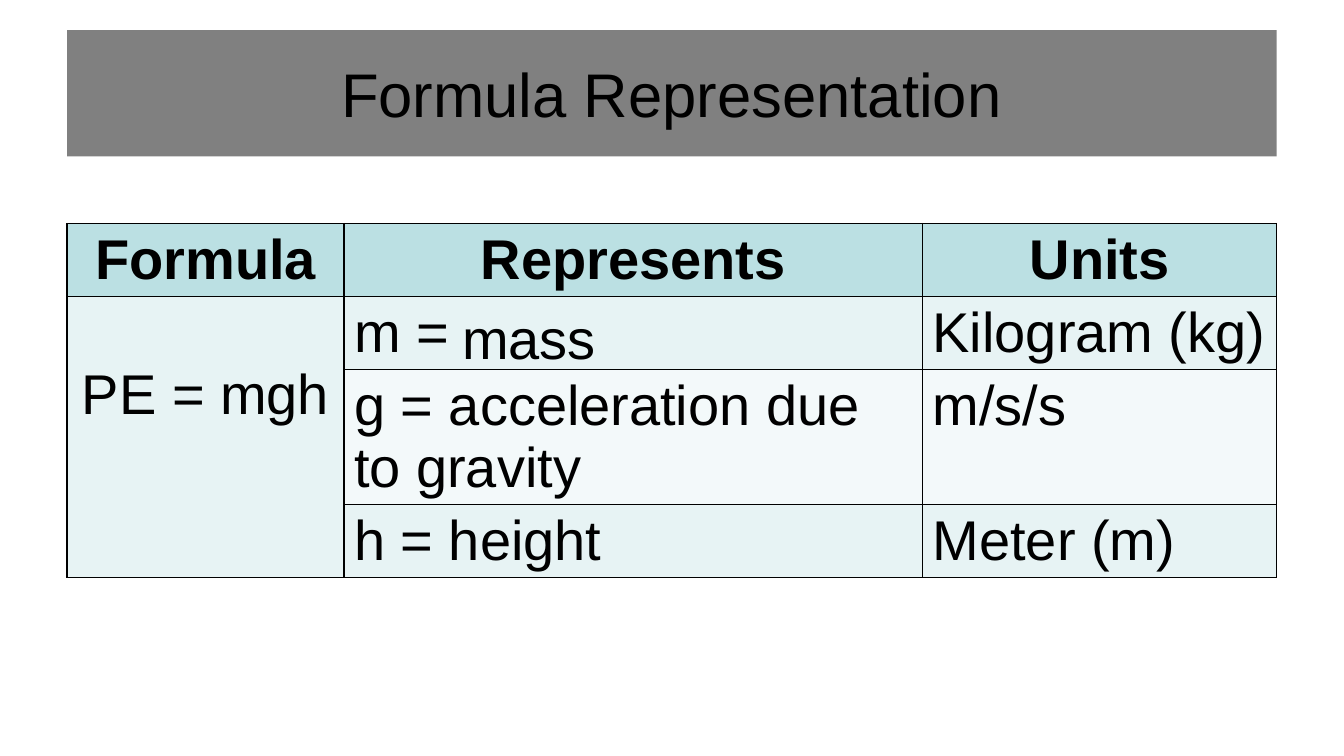
from lxml.etree import SubElement
from pptx import Presentation
from pptx.dml.color import RGBColor
from pptx.enum.text import MSO_ANCHOR, PP_ALIGN
from pptx.oxml.ns import qn
from pptx.util import Cm, Pt

COLORS = {
    "text": "000000",
    "border": "000000",
    "banner": "808080",
    "header": "BBE0E3",
    "band_dark": "E7F3F4",
    "band_light": "F3F9FA",
}
FONT = "Arial"
TABLE_TEXT_SIZE = 40
COLUMN_WIDTHS = [6.98, 14.58, 8.92]
ROW_HEIGHTS = [1.84, 1.84, 3.4, 1.84]
ROW_FILLS = ["header", "band_dark", "band_light", "band_dark"]
ROWS = [
    ["Formula", "Represents", "Units"],
    ["PE = mgh", "m =", "Kilogram (kg)"],
    ["", "g = acceleration due to gravity", "m/s/s"],
    ["", "h = height", "Meter (m)"],
]


def color(name):
    return RGBColor.from_string(COLORS[name])


def write_text(text_frame, text, size, alignment=PP_ALIGN.LEFT, bold=False):
    text_frame.text = text
    paragraph = text_frame.paragraphs[0]
    paragraph.alignment = alignment
    for run in paragraph.runs:
        run.font.name = FONT
        run.font.size = Pt(size)
        run.font.bold = bold
        run.font.color.rgb = color("text")


def add_borders(cell):
    properties = cell._tc.get_or_add_tcPr()
    for side in ("lnL", "lnR", "lnT", "lnB"):
        line = SubElement(properties, qn(f"a:{side}"), w=str(Pt(1)))
        fill = SubElement(line, qn("a:solidFill"))
        SubElement(fill, qn("a:srgbClr"), val=COLORS["border"])


def add_title(slide, left, top, width, height):
    title = slide.shapes.title
    title.left, title.top = Cm(left), Cm(top)
    title.width, title.height = Cm(width), Cm(height)
    title.fill.solid()
    title.fill.fore_color.rgb = color("banner")
    title.text_frame.vertical_anchor = MSO_ANCHOR.MIDDLE
    write_text(title.text_frame, "Formula Representation", 44, PP_ALIGN.CENTER)


def add_formula_table(slide, left, top, width, height):
    frame = slide.shapes.add_table(
        len(ROWS), len(COLUMN_WIDTHS), Cm(left), Cm(top), Cm(width), Cm(height)
    )
    table = frame.table
    for column, column_width in zip(table.columns, COLUMN_WIDTHS):
        column.width = Cm(column_width)
    for row, row_height in zip(table.rows, ROW_HEIGHTS):
        row.height = Cm(row_height)

    formula_cell = table.cell(1, 0)
    formula_cell.merge(table.cell(3, 0))
    for row_index, texts in enumerate(ROWS):
        is_header = row_index == 0
        for column_index, text in enumerate(texts):
            cell = table.cell(row_index, column_index)
            add_borders(cell)
            cell.fill.solid()
            cell.fill.fore_color.rgb = color(ROW_FILLS[row_index])
            centered = is_header or column_index == 0
            alignment = PP_ALIGN.CENTER if centered else PP_ALIGN.LEFT
            write_text(cell.text_frame, text, TABLE_TEXT_SIZE, alignment, is_header)
    formula_cell.margin_top = Cm(1.69)


def add_answer(slide, left, top, width, height):
    answer = slide.shapes.add_textbox(Cm(left), Cm(top), Cm(width), Cm(height))
    answer.text_frame.word_wrap = True
    write_text(answer.text_frame, "mass", TABLE_TEXT_SIZE)


def main():
    presentation = Presentation()
    presentation.slide_width = Cm(33.87)
    presentation.slide_height = Cm(19.05)
    slide = presentation.slides.add_slide(presentation.slide_layouts[5])
    left, width, table_top = 1.69, sum(COLUMN_WIDTHS), 5.63
    add_title(slide, left, 0.76, width, 3.18)
    add_formula_table(slide, left, table_top, width, sum(ROW_HEIGHTS))
    add_answer(slide, left + 9.71, table_top + 1.89, 5.41, 1.96)
    presentation.save("out.pptx")


if __name__ == "__main__":
    main()
